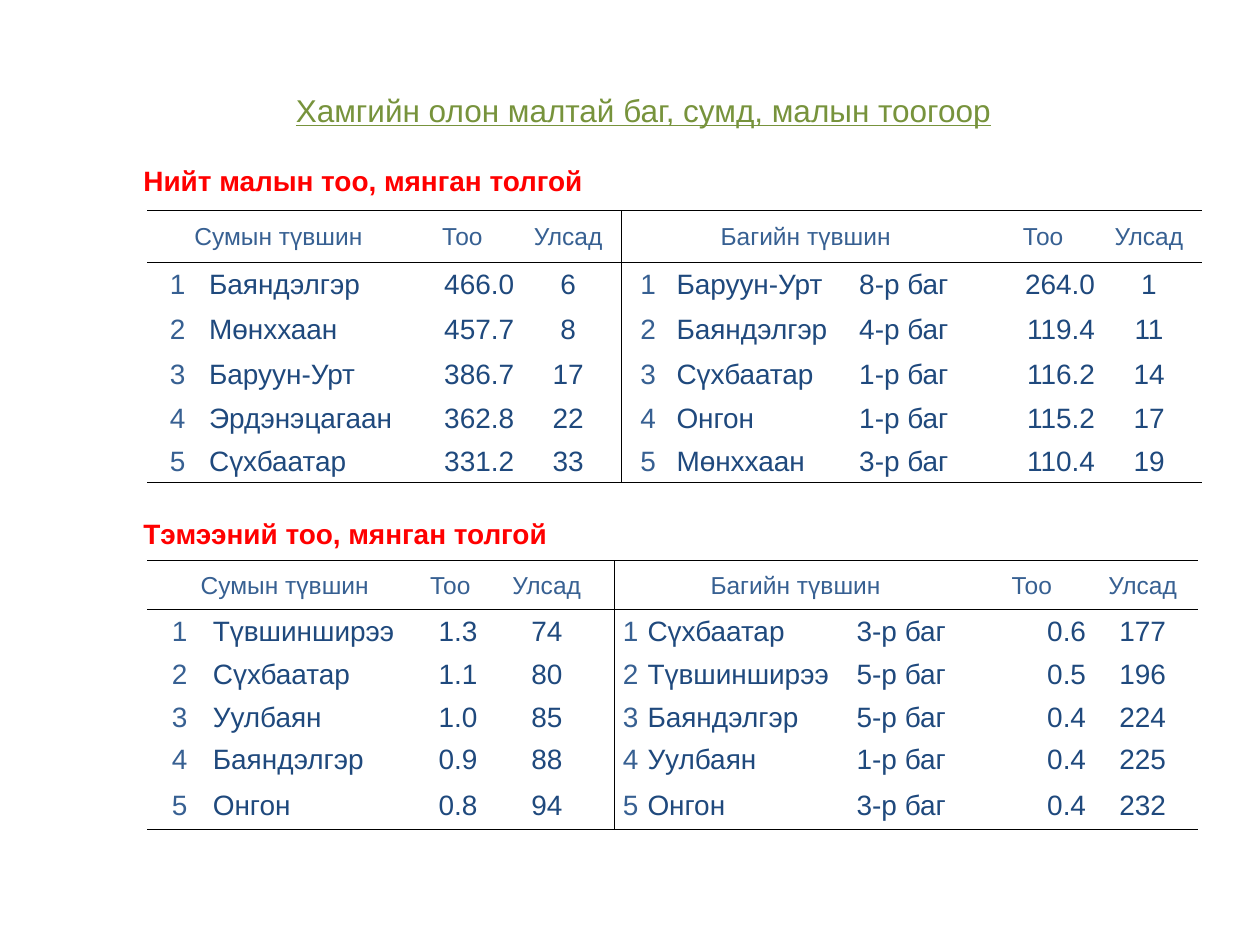
from lxml import etree
from pptx import Presentation, util as u
from pptx.dml.color import RGBColor
from pptx.enum import text
from pptx.oxml.ns import qn

GREEN = RGBColor(0x77, 0x93, 0x3C)
RED = RGBColor(0xFF, 0x00, 0x00)
BLUE = RGBColor(0x37, 0x60, 0x92)
NAVY = RGBColor(0x1F, 0x49, 0x7D)
BLACK = RGBColor(0x00, 0x00, 0x00)

LEFT, CENTER, RIGHT = text.PP_ALIGN.LEFT, text.PP_ALIGN.CENTER, text.PP_ALIGN.RIGHT
COLUMN_ALIGN = [CENTER, LEFT, RIGHT, CENTER, CENTER, LEFT, LEFT, RIGHT, CENTER]
RANK_COLUMNS = (0, 4)
DIVIDER = 4  # first column of the right half
# Heading: column, span, label
HEADINGS = [(0, 2, "Сумын түвшин"), (2, 1, "Тоо"), (3, 1, "Улсад"),
            (4, 3, "Багийн түвшин"), (7, 1, "Тоо"), (8, 1, "Улсад")]


class Ranking:
    """Slide on a grid of 100 columns by 75 rows."""
    font = "Arial"
    line_width = u.Pt(0.5)

    def __init__(self, prs):
        self.s = prs.slides.add_slide(prs.slide_layouts[6])
        self.col, self.row = prs.slide_width / 100, prs.slide_height / 75

    def x(self, n):
        return round(n * self.col)

    def y(self, n):
        return round(n * self.row)

    def style(self, p, words, size, color, align=LEFT):
        p.text, p.alignment = words, align
        p.font.name, p.font.size = self.font, u.Pt(size)
        p.font.color.rgb = color
        return p.font

    def label(self, left, top, height, words, size, color, **marks):
        sp = self.s.shapes.add_textbox(self.x(left), self.y(top), self.x(58.3), self.y(height))
        tf = sp.text_frame
        tf.word_wrap, tf.auto_size = True, text.MSO_AUTO_SIZE.SHAPE_TO_FIT_TEXT
        font = self.style(tf.paragraphs[0], words, size, color)
        for name, value in marks.items():
            setattr(font, name, value)

    def borders(self, cell, sides):
        tc_pr = cell._tc.get_or_add_tcPr()
        for i, side in enumerate("LRTB"):
            ln = etree.Element(qn(f"a:ln{side}"), w=str(self.line_width))
            if side in sides:
                fill = etree.SubElement(ln, qn("a:solidFill"))
                etree.SubElement(fill, qn("a:srgbClr"), val=str(BLACK))
            else:
                etree.SubElement(ln, qn("a:noFill"))
            tc_pr.insert(i, ln)

    def table(self, top, widths, heights, data):
        frame = self.s.shapes.add_table(len(heights), len(widths), self.x(11.7), self.y(top),
                                        self.x(sum(widths)), self.y(sum(heights)))
        t = frame.table
        t.first_row = t.horz_banding = False
        for column, w in zip(t.columns, widths):
            column.width = self.x(w)
        for row, h in zip(t.rows, heights):
            row.height = self.y(h)

        # Plain cells, ruled around the heading, at the foot and between halves
        last = len(heights) - 1
        for r in range(len(heights)):
            for c in range(len(widths)):
                cell = t.cell(r, c)
                cell.fill.background()
                cell.vertical_anchor = text.MSO_ANCHOR.MIDDLE
                cell.margin_left = cell.margin_right = cell.margin_top = u.Inches(0.01)
                cell.margin_bottom = 0
                self.borders(cell, "L" * (c == DIVIDER) + "R" * (c == DIVIDER - 1)
                             + "T" * (r in (0, 1)) + "B" * (r in (0, last)))

        # Heading row
        for c, span, words in HEADINGS:
            if span > 1:
                t.cell(0, c).merge(t.cell(0, c + span - 1))
            self.style(t.cell(0, c).text_frame.paragraphs[0], words, 14, BLUE, CENTER)

        # Ranked rows
        for r, (sum_part, bag_part) in enumerate(data, 1):
            for c, words in enumerate([str(r), *sum_part, str(r), *bag_part]):
                color = BLUE if c in RANK_COLUMNS else NAVY
                self.style(t.cell(r, c).text_frame.paragraphs[0], words, 16, color,
                           COLUMN_ALIGN[c])


LIVESTOCK = [
    (("Баяндэлгэр", "466.0", "6"), ("Баруун-Урт", "8-р баг", "264.0", "1")),
    (("Мөнххаан", "457.7", "8"), ("Баяндэлгэр", "4-р баг", "119.4", "11")),
    (("Баруун-Урт", "386.7", "17"), ("Сүхбаатар", "1-р баг", "116.2", "14")),
    (("Эрдэнэцагаан", "362.8", "22"), ("Онгон", "1-р баг", "115.2", "17")),
    (("Сүхбаатар", "331.2", "33"), ("Мөнххаан", "3-р баг", "110.4", "19")),
]
CAMELS = [
    (("Түвшинширээ", "1.3", "74"), ("Сүхбаатар", "3-р баг", "0.6", "177")),
    (("Сүхбаатар", "1.1", "80"), ("Түвшинширээ", "5-р баг", "0.5", "196")),
    (("Уулбаян", "1.0", "85"), ("Баяндэлгэр", "5-р баг", "0.4", "224")),
    (("Баяндэлгэр", "0.9", "88"), ("Уулбаян", "1-р баг", "0.4", "225")),
    (("Онгон", "0.8", "94"), ("Онгон", "3-р баг", "0.4", "232")),
]


def main():
    prs = Presentation()
    prs.slide_width, prs.slide_height = u.Inches(10), u.Inches(7.5)
    page = Ranking(prs)

    # Title
    page.label(22.5, 6.7, 4, "Хамгийн олон малтай баг, сумд, малын тоогоор", 18, GREEN,
               underline=True)

    # All livestock
    page.label(10.4, 12.5, 3.7, "Нийт малын тоо, мянган толгой", 16, RED, bold=True)
    page.table(16.7, [4.8, 16, 8.4, 8.4, 4.3, 14.5, 10.5, 8.4, 8.4],
               [4.1, *[3.55] * 4, 3.3], LIVESTOCK)

    # Camels
    page.label(10.4, 40.5, 3.7, "Тэмээний тоо, мянган толгой", 16, RED, bold=True)
    page.table(44.5, [5.1, 16.7, 4.5, 10.8, 2.5, 16.6, 9.6, 8.8, 8.8],
               [3.9, *[3.4] * 4, 3.8], CAMELS)

    prs.save("out.pptx")


if __name__ == "__main__":
    main()
